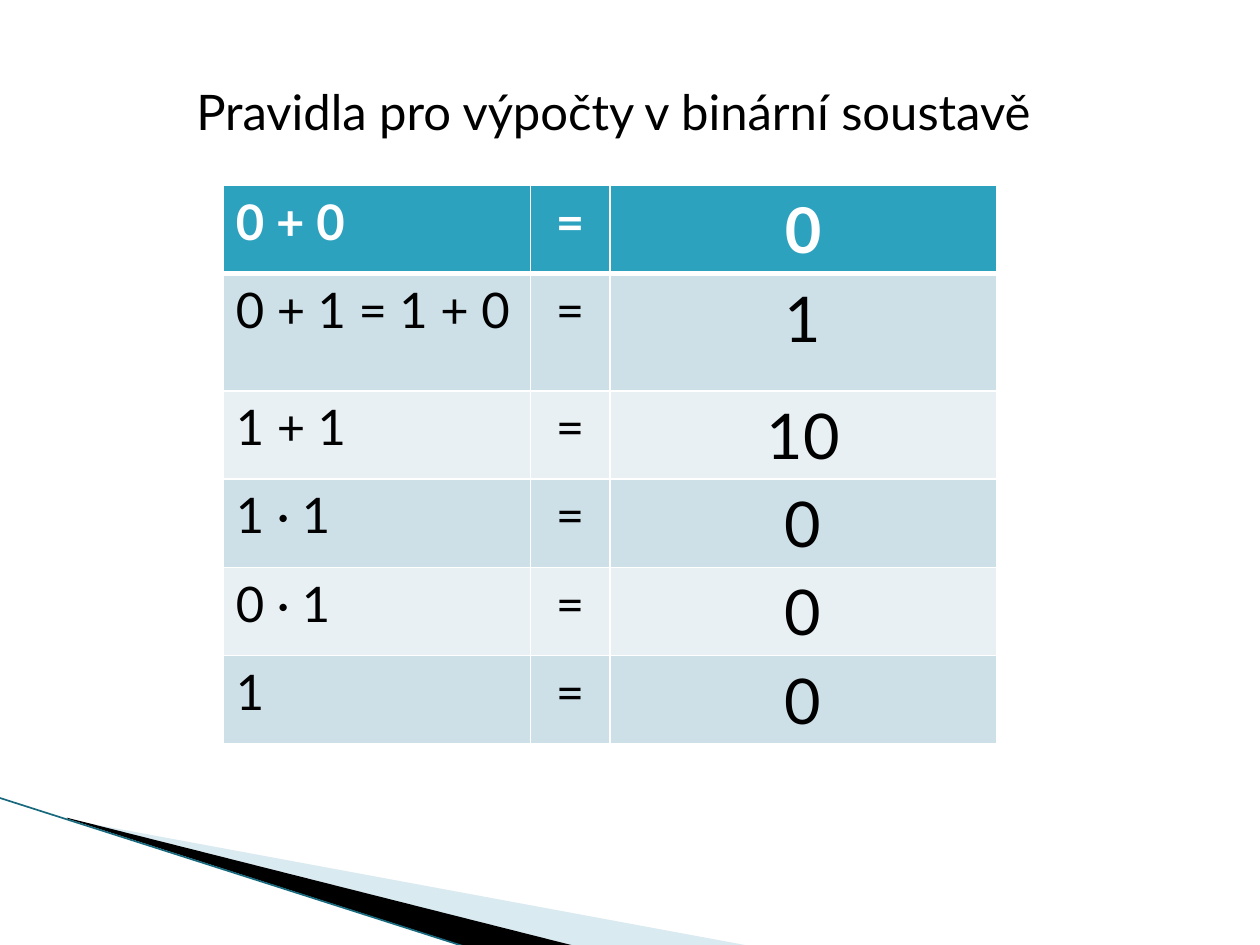
from lxml import etree
from pptx import Presentation
from pptx.dml.color import RGBColor
from pptx.enum.shapes import MSO_CONNECTOR
from pptx.enum.text import MSO_AUTO_SIZE, PP_ALIGN
from pptx.oxml import parse_xml
from pptx.oxml.ns import nsdecls, qn
from pptx.util import Pt

LEFT, CENTER = PP_ALIGN.LEFT, PP_ALIGN.CENTER
STRAIGHT = MSO_CONNECTOR.STRAIGHT
GROW = MSO_AUTO_SIZE.SHAPE_TO_FIT_TEXT
WHITE = RGBColor(0xFF, 0xFF, 0xFF)
BLACK = RGBColor(0, 0, 0)
TEAL = RGBColor(0x2D, 0xA2, 0xBF)
DEEP = RGBColor(0x18, 0x69, 0x7D)
MIST = RGBColor(0xA0, 0xCB, 0xDC)
BANDS = [RGBColor(0xE8, 0xF0, 0xF4), RGBColor(0xCD, 0xE0, 0xE8)]


def write(frame, text, size=28, color=BLACK, bold=False, align=LEFT):
    para = frame.paragraphs[0]
    para.alignment = align
    run = para.add_run()
    run.text = text
    run.font.name = "Lato"
    run.font.size = Pt(size)
    run.font.bold = bold
    run.font.color.rgb = color


def border(cell, side, width):
    cell._tc.get_or_add_tcPr().append(parse_xml(
        f'<a:ln{side} {nsdecls("a")} w="{Pt(width)}"><a:solidFill>'
        f'<a:srgbClr val="{WHITE}"/></a:solidFill></a:ln{side}>'))


prs = Presentation()
prs.slide_width, prs.slide_height = Pt(720), Pt(540)
slide = prs.slides.add_slide(prs.slide_layouts[6])
shapes = slide.shapes

wedges = [
    (MIST, 40, [(39.6, 468.5), (428.4, 540.5), (328.3, 540.5), (39.6, 468)]),
    (BLACK, 100, [(38.2, 467.3), (329, 540.7), (267.8, 541.4), (38.9, 468)]),
]
for color, alpha, points in wedges:
    points = [(Pt(x), Pt(y)) for x, y in points]
    form = shapes.build_freeform(*points[0], scale=1.0)
    form.add_line_segments(points[1:], close=True)
    wedge = form.convert_to_shape()
    wedge.shadow.inherit = False
    wedge.line.fill.background()
    wedge.fill.solid()
    wedge.fill.fore_color.rgb = color
    if alpha < 100:
        tint = wedge._element.spPr.find(qn("a:solidFill"))[0]
        etree.SubElement(tint, qn("a:alpha")).set("val", str(alpha * 1000))

edge = shapes.add_connector(STRAIGHT, Pt(-0.7), Pt(455.8), Pt(267.1), Pt(541.4))
edge.line.color.rgb = DEEP
edge.line.width = Pt(0.95)
etree.SubElement(edge._element.spPr, qn("a:effectLst"))

rules = [("0 + 0", "0"), ("0 + 1 = 1 + 0", "1"), ("1 + 1", "10"),
         ("1 · 1", "0"), ("0 · 1", "0"), ("1", "0")]
widths = [175.5, 45.4, 221.1]
heights = [50.4, 67] + [50.4] * 4
table = shapes.add_table(len(rules), len(widths), Pt(127.6), Pt(106),
                         Pt(sum(widths)), Pt(sum(heights))).table
for col, width in zip(table.columns, widths):
    col.width = Pt(width)
for i, (term, result) in enumerate(rules):
    table.rows[i].height = Pt(heights[i])
    head = i == 0
    for j, text in enumerate([term, "=", result]):
        cell = table.cell(i, j)
        for side in "LRTB":
            thick = (side == "B" and head) or (side == "T" and i == 1)
            border(cell, side, 3 if thick else 1)
        cell.fill.solid()
        cell.fill.fore_color.rgb = TEAL if head else BANDS[i % 2]
        write(cell.text_frame, text, size=36 if j == 2 else 28, bold=head,
              color=WHITE if head else BLACK, align=CENTER if j else LEFT)

title = shapes.add_textbox(Pt(105.1), Pt(43.2), Pt(509), Pt(41)).text_frame
title.word_wrap = False
title.auto_size = GROW
write(title, "Pravidla pro výpočty v binární soustavě")

prs.save("out.pptx")
